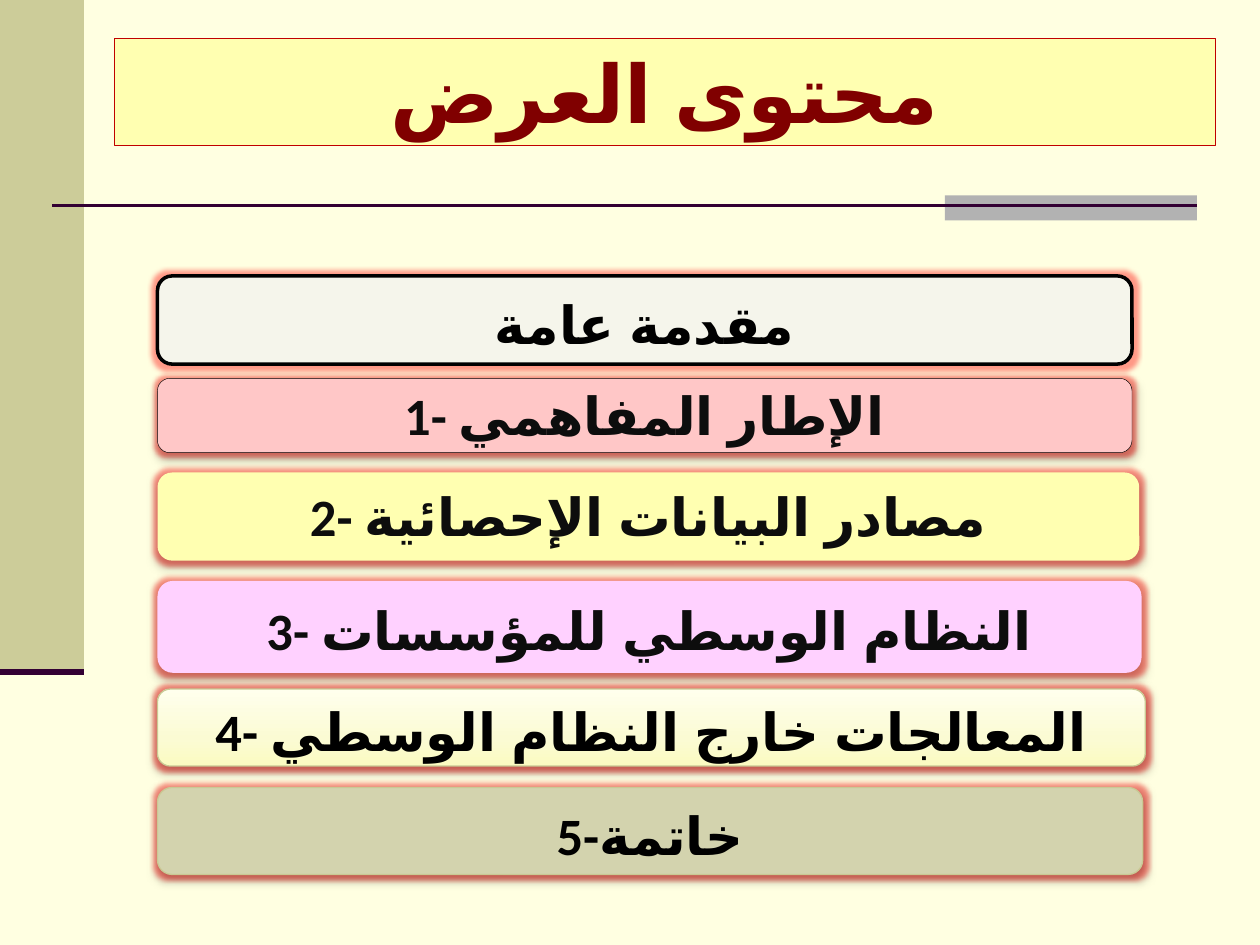
"""Build the contents slide of an Arabic presentation."""
from copy import deepcopy
from dataclasses import dataclass
from typing import Optional

from lxml.etree import SubElement
from pptx import Presentation
from pptx.dml.color import RGBColor
from pptx.enum.lang import MSO_LANGUAGE_ID as Language
from pptx.enum.shapes import MSO_CONNECTOR as Connector, MSO_SHAPE as Preset
from pptx.enum.text import MSO_ANCHOR as Anchor, PP_ALIGN as Align
from pptx.oxml.ns import qn
from pptx.util import Pt

FONT = "Calibri"
BLACK = RGBColor(0x00, 0x00, 0x00)
INK = RGBColor(0x0D, 0x0D, 0x0D)
MAROON = RGBColor(0x80, 0x00, 0x00)
CRIMSON = RGBColor(0xC0, 0x00, 0x00)
GLOW = RGBColor(0xFF, 0x00, 0x00)
PURPLE = RGBColor(0x33, 0x00, 0x33)
IVORY = RGBColor(0xFF, 0xFF, 0xE1)
KHAKI = RGBColor(0xCC, 0xCC, 0x99)
GREY = RGBColor(0xB2, 0xB2, 0xB2)
YELLOW = RGBColor(0xFF, 0xFF, 0xB1)
OFF_WHITE = RGBColor(0xF5, 0xF5, 0xEB)
ROSE = RGBColor(0xFF, 0xC7, 0xC7)
PINK = RGBColor(0xFF, 0xD1, 0xFF)
SAND = RGBColor(0xD3, 0xD3, 0xAE)
OLIVE = RGBColor(0xC9, 0xC9, 0x94)
CREAM = (
    (0, RGBColor(0xFB, 0xFB, 0xC1)),
    (0.35, RGBColor(0xFB, 0xFB, 0xD3)),
    (1, RGBColor(0xFF, 0xFF, 0xED)),
)


@dataclass(frozen=True)
class Shadow:
    """Downward black shadow: opacity in percent, blur and distance in points."""
    opacity: int
    blur: float
    distance: float


@dataclass(frozen=True)
class Topic:
    """One rounded bar of the contents list, measured in points."""
    text: str
    top: float
    width: float
    height: float
    fill: RGBColor | tuple
    ink: RGBColor = BLACK
    line: Optional[RGBColor] = None
    line_width: float = 0.75
    shadow: Optional[Shadow] = None
    spacing: float = 1.0


DEEP = Shadow(32, 3.5, 2.2)
SOFT = Shadow(38, 3.1, 1.6)
TOPICS_LEFT = 90
TOPICS = (
    Topic("مقدمة عامة", 157.7, 556.9, 50.4, OFF_WHITE, line=BLACK, line_width=2),
    Topic("1- الإطار المفاهمي", 216.2, 556.9, 42.5, ROSE, INK, BLACK, 0.25, DEEP, 0.9),
    Topic("2- مصادر البيانات الإحصائية", 270, 561, 50.4, YELLOW, INK, shadow=DEEP, spacing=0.9),
    Topic("3- النظام الوسطي للمؤسسات", 332, 562.3, 52.5, PINK, INK, shadow=DEEP),
    Topic("4- المعالجات خارج النظام الوسطي", 393.8, 564.5, 44, CREAM, line=OLIVE, shadow=SOFT),
    Topic("5-خاتمة", 450, 563, 49.7, SAND, line=OLIVE, shadow=SOFT),
)


def paint(shape, fill: RGBColor | tuple) -> None:
    """Fill with one colour, or with gradient stops running upwards."""
    if isinstance(fill, RGBColor):
        shape.fill.solid()
        shape.fill.fore_color.rgb = fill
        return
    shape.fill.gradient()
    shape.fill.gradient_angle = 90
    stop_list = shape._element.spPr.find(".//" + qn("a:gsLst"))
    while len(stop_list) < len(fill):
        stop_list.append(deepcopy(stop_list[0]))
    for stop, (position, color) in zip(shape.fill.gradient_stops, fill):
        stop.position = position
        stop.color.rgb = color


def add_panel(slide, preset: Preset, left: float, top: float, width: float, height: float,
              fill: RGBColor | tuple, line: Optional[RGBColor] = None, line_width: float = 0.75):
    """Add a filled shape without the theme shadow."""
    shape = slide.shapes.add_shape(preset, Pt(left), Pt(top), Pt(width), Pt(height))
    paint(shape, fill)
    if line is None:
        shape.line.fill.background()
    else:
        shape.line.color.rgb = line
        shape.line.width = Pt(line_width)
    shape.shadow.inherit = False
    return shape


def write(shape, text: str, *, size: float, color: RGBColor, spacing: float = 1.0) -> None:
    """Write one bold centred Arabic line in the middle of a shape."""
    frame = shape.text_frame
    frame.word_wrap = True
    frame.vertical_anchor = Anchor.MIDDLE
    paragraph = frame.paragraphs[0]
    paragraph.alignment = Align.CENTER
    paragraph.line_spacing = spacing
    run = paragraph.add_run()
    run.text = text
    run.font.name = FONT
    run.font.size = Pt(size)
    run.font.bold = True
    run.font.color.rgb = color
    run.font.language_id = Language.ARABIC_ALGERIA


def add_color(effect, color: RGBColor, opacity: int) -> None:
    """Give an effect a translucent colour."""
    tint = SubElement(effect, qn("a:srgbClr"), val=str(color))
    SubElement(tint, qn("a:alpha"), val=str(opacity * 1000))


def add_effects(shape, shadow: Optional[Shadow]) -> None:
    """Add the red glow and, when given, the shadow."""
    effects = shape._element.spPr.find(qn("a:effectLst"))
    add_color(SubElement(effects, qn("a:glow"), rad=str(Pt(5))), GLOW, 40)
    if shadow:
        cast = SubElement(effects, qn("a:outerShdw"), blurRad=str(Pt(shadow.blur)),
                          dist=str(Pt(shadow.distance)), dir="5400000", rotWithShape="0")
        add_color(cast, BLACK, shadow.opacity)


def add_rule(slide, left: float, right: float, y: float, width: float) -> None:
    """Add a horizontal purple rule."""
    rule = slide.shapes.add_connector(Connector.STRAIGHT, Pt(left), Pt(y), Pt(right), Pt(y))
    rule.line.color.rgb = PURPLE
    rule.line.width = Pt(width)
    SubElement(rule._element.spPr, qn("a:effectLst"))


def add_topic(slide, topic: Topic) -> None:
    """Add one bar of the contents list."""
    bar = add_panel(slide, Preset.ROUNDED_RECTANGLE, TOPICS_LEFT, topic.top, topic.width,
                    topic.height, topic.fill, topic.line, topic.line_width)
    add_effects(bar, topic.shadow)
    frame = bar.text_frame
    frame.margin_left = frame.margin_right = frame.margin_bottom = Pt(0)
    frame.margin_top = Pt(3.6)
    write(bar, topic.text, size=30, color=topic.ink, spacing=topic.spacing)


def main() -> None:
    """Build and save the slide."""
    deck = Presentation()
    deck.slide_width, deck.slide_height = Pt(720), Pt(540)
    slide = deck.slides.add_slide(deck.slide_layouts[6])
    slide.background.fill.solid()
    slide.background.fill.fore_color.rgb = IVORY

    add_panel(slide, Preset.RECTANGLE, 0, 0, 48, 384, KHAKI)
    add_panel(slide, Preset.RECTANGLE, 540, 111.6, 144, 14.4, GREY)
    add_rule(slide, 30, 684, 117.5, 1.5)
    add_rule(slide, 0, 48, 384, 3.5)

    title = add_panel(slide, Preset.RECTANGLE, 65.3, 21.8, 629.3, 61.2, YELLOW, CRIMSON)
    write(title, "محتوى العرض", size=46, color=MAROON)
    for topic in TOPICS:
        add_topic(slide, topic)
    deck.save("out.pptx")


if __name__ == "__main__":
    main()
